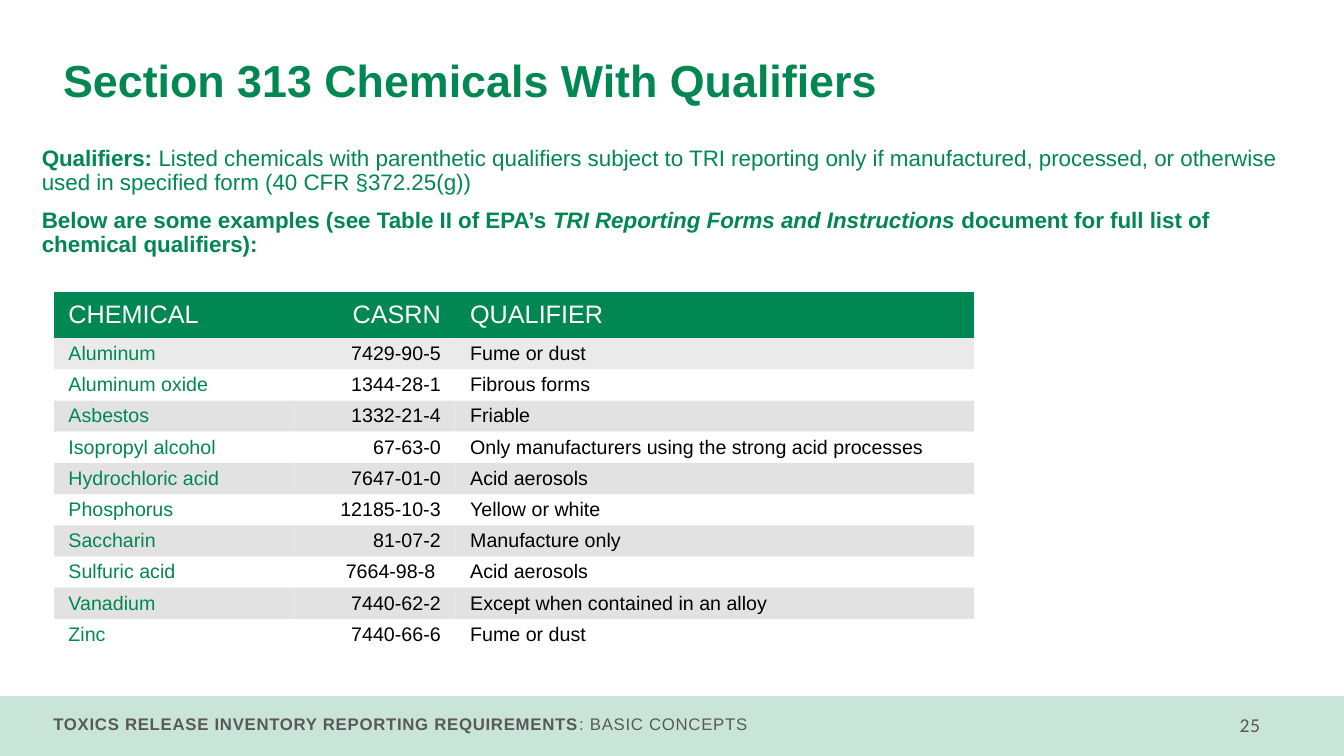
from lxml.etree import SubElement
from pptx import Presentation
from pptx.dml.color import RGBColor
from pptx.enum.shapes import MSO_SHAPE
from pptx.enum.text import MSO_ANCHOR, PP_ALIGN
from pptx.oxml import parse_xml
from pptx.oxml.ns import nsdecls, qn
from pptx.util import Pt

GREEN = RGBColor(0x00, 0x87, 0x52)
WHITE = RGBColor(0xFF, 0xFF, 0xFF)
BLACK = RGBColor(0x00, 0x00, 0x00)
SLATE = RGBColor(0x59, 0x59, 0x59)
SILVER = RGBColor(0xD9, 0xD9, 0xD9)
NO_GRID_STYLE = "{2D5ABB26-0587-4C30-8999-92F81FD0307C}"

# Each paragraph is a list of (words, bold, italic)
TITLE = [[("Section 313 Chemicals With Qualifiers", True, False)]]
INTRO = [
    [("Qualifiers: ", True, False),
     ("Listed chemicals with parenthetic qualifiers subject to TRI reporting only if "
      "manufactured, processed, or otherwise used in specified form (40 CFR §372.25(g))",
      False, False)],
    [("Below are some examples (see Table II of EPA’s ", True, False),
     ("TRI Reporting Forms and Instructions ", True, True),
     ("document for full list of chemical qualifiers):", True, False)],
]
FOOTER = [[("TOXICS RELEASE INVENTORY REPORTING REQUIREMENTS", True, False),
           (": BASIC CONCEPTS", False, False)]]
PAGE_NUMBER = [[("25", False, False)]]

HEADINGS = ("CHEMICAL", "CASRN", "QUALIFIER")
CHEMICALS = [
    ("Aluminum", "7429-90-5", "Fume or dust"),
    ("Aluminum oxide", "1344-28-1", "Fibrous forms"),
    ("Asbestos", "1332-21-4", "Friable"),
    ("Isopropyl alcohol", "67-63-0", "Only manufacturers using the strong acid processes"),
    ("Hydrochloric acid", "7647-01-0", "Acid aerosols"),
    ("Phosphorus", "12185-10-3", "Yellow or white"),
    ("Saccharin", "81-07-2", "Manufacture only"),
    ("Sulfuric acid", "7664-98-8 ", "Acid aerosols"),
    ("Vanadium", "7440-62-2", "Except when contained in an alloy"),
    ("Zinc", "7440-66-6", "Fume or dust"),
]
SLIDE_WIDTH, SLIDE_HEIGHT = 960, 540
FOOTER_HEIGHT = 43
COLUMN_WIDTHS = (172, 115, 371)
COLUMN_ALIGNS = (PP_ALIGN.LEFT, PP_ALIGN.RIGHT, PP_ALIGN.LEFT)
COLUMN_COLORS = (GREEN, BLACK, BLACK)
HEADER_HEIGHT, ROW_HEIGHT = 31.4, 22.3


def fill_solid(fill, color, opacity=100):
    """Fill with a colour; opacity is in percent."""
    fill.solid()
    fill.fore_color.rgb = color
    if opacity < 100:
        color_tag = fill._xPr.find(qn("a:solidFill"))[0]
        SubElement(color_tag, qn("a:alpha"), val=str(opacity * 1000))


def style_font(font, size, color, name="Arial"):
    font.size, font.name = Pt(size), name
    font.color.rgb = color


def add_text(slide, box, paragraphs, size, color, font="Arial", align=PP_ALIGN.LEFT,
             anchor=MSO_ANCHOR.TOP, line_spacing=None, gap=0, tracking=None):
    """Add a text box; tracking is in hundredths of a point."""
    frame = slide.shapes.add_textbox(*map(Pt, box)).text_frame
    frame.word_wrap = True
    frame.vertical_anchor = anchor
    for index, pieces in enumerate(paragraphs):
        paragraph = frame.add_paragraph() if index else frame.paragraphs[0]
        paragraph.alignment = align
        if line_spacing:
            paragraph.line_spacing = line_spacing
        if index:
            paragraph.space_before = Pt(gap)
        for words, bold, italic in pieces:
            run = paragraph.add_run()
            run.text = words
            style_font(run.font, size, color, font)
            run.font.bold, run.font.italic = bold, italic
            if tracking:
                run.font._element.set("spc", str(tracking))


def add_white_edges(cell, sides):
    """Draw 1 pt white lines on the given sides, in the order L, R, T, B."""
    properties = cell._tc.get_or_add_tcPr()
    for position, side in enumerate(sides):
        properties.insert(position, parse_xml(
            f'<a:ln{side} {nsdecls("a")} w="12700"><a:solidFill>'
            f'<a:srgbClr val="{WHITE}"/></a:solidFill></a:ln{side}>'))


def row_look(row):
    """Return font size, vertical margin, fill colour and opacity of a table row."""
    if row == 0:
        return 18, 5.76, GREEN, 100
    if row % 2 == 0:
        return 14, 2, WHITE, 75
    return 14, 2, SILVER, 55 if row == 1 else 75


def add_chemical_table(slide, left, top):
    rows = [HEADINGS, *CHEMICALS]
    height = HEADER_HEIGHT + ROW_HEIGHT * len(CHEMICALS)
    table = slide.shapes.add_table(len(rows), len(HEADINGS), Pt(left), Pt(top),
                                   Pt(sum(COLUMN_WIDTHS)), Pt(height)).table
    table.horz_banding = False
    table._tbl.tblPr.find(qn("a:tableStyleId")).text = NO_GRID_STYLE
    for column, width in zip(table.columns, COLUMN_WIDTHS):
        column.width = Pt(width)

    last = len(HEADINGS) - 1
    for r, entries in enumerate(rows):
        table.rows[r].height = Pt(ROW_HEIGHT if r else HEADER_HEIGHT)
        size, margin, color, opacity = row_look(r)
        for c, entry in enumerate(entries):
            cell = table.cell(r, c)
            cell.margin_left = cell.margin_right = Pt(10.5)
            cell.margin_top = cell.margin_bottom = Pt(margin)
            cell.vertical_anchor = MSO_ANCHOR.MIDDLE
            fill_solid(cell.fill, color, opacity)
            add_white_edges(cell, "L" * (c == 0) + "R" * (c == last) + "T" * (r == 0))
            paragraph = cell.text_frame.paragraphs[0]
            paragraph.text = entry
            paragraph.alignment = COLUMN_ALIGNS[c]
            style_font(paragraph.runs[0].font, size, COLUMN_COLORS[c] if r else WHITE)


def main():
    deck = Presentation()
    deck.slide_width, deck.slide_height = Pt(SLIDE_WIDTH), Pt(SLIDE_HEIGHT)
    slide = deck.slides.add_slide(deck.slide_layouts[6])

    band = slide.shapes.add_shape(MSO_SHAPE.RECTANGLE, 0, Pt(SLIDE_HEIGHT - FOOTER_HEIGHT),
                                  Pt(SLIDE_WIDTH), Pt(FOOTER_HEIGHT))
    band.shadow.inherit = False
    band.line.fill.background()
    fill_solid(band.fill, GREEN, 21)

    add_text(slide, (31, 506.3, 677, 21.8), FOOTER, 12, SLATE, tracking=50)
    add_text(slide, (811.5, 505.5, 95.7, 24.2), PAGE_NUMBER, 14, SLATE, font="Calibri",
             align=PP_ALIGN.RIGHT, tracking=50)
    add_text(slide, (38, 30, 869, 58.5), TITLE, 32, GREEN,
             anchor=MSO_ANCHOR.MIDDLE, line_spacing=0.9)
    add_text(slide, (22.8, 101.5, 914.4, 87), INTRO, 16, GREEN, line_spacing=0.9, gap=10)
    add_chemical_table(slide, 38.4, 208.4)
    deck.save("out.pptx")


if __name__ == "__main__":
    main()
